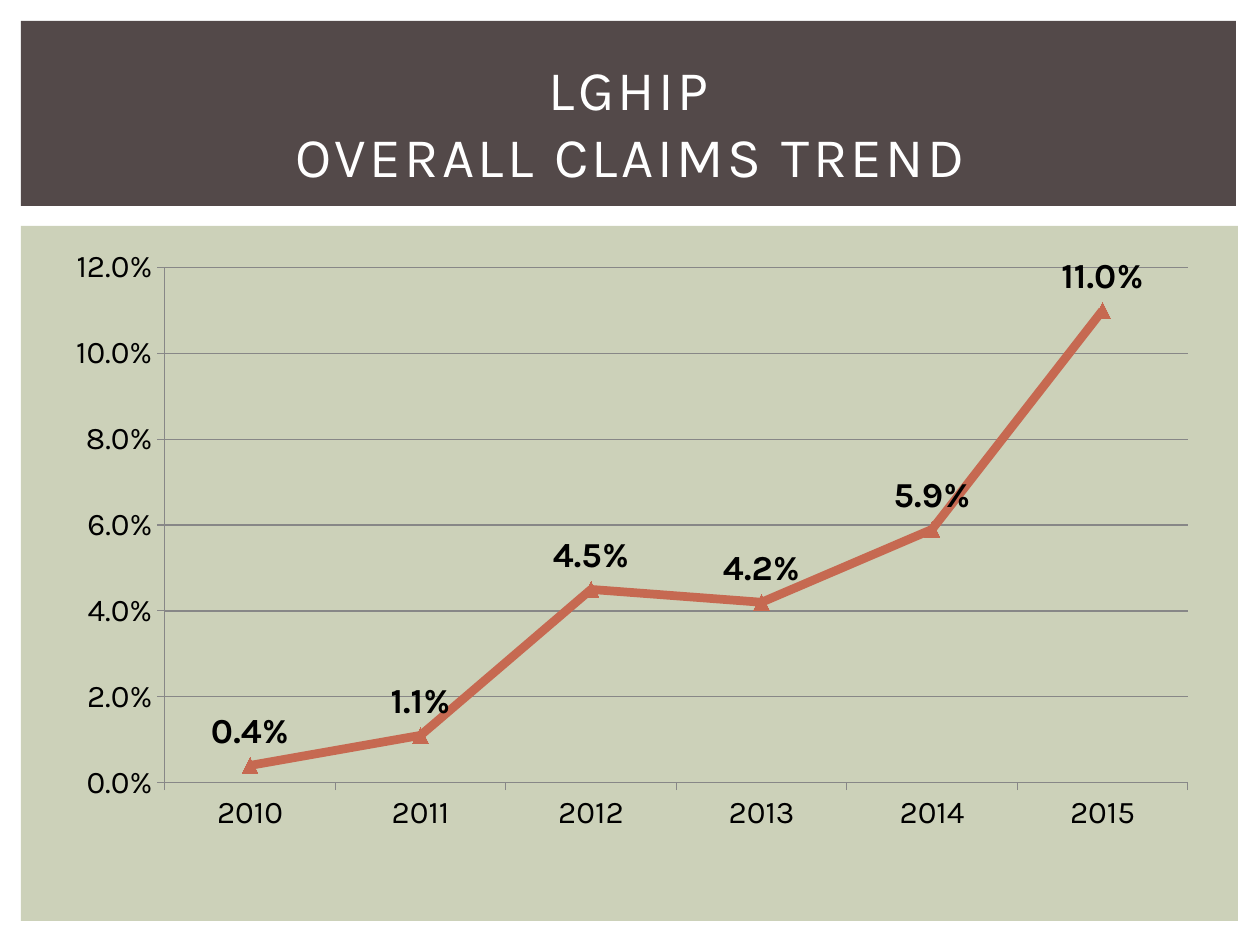
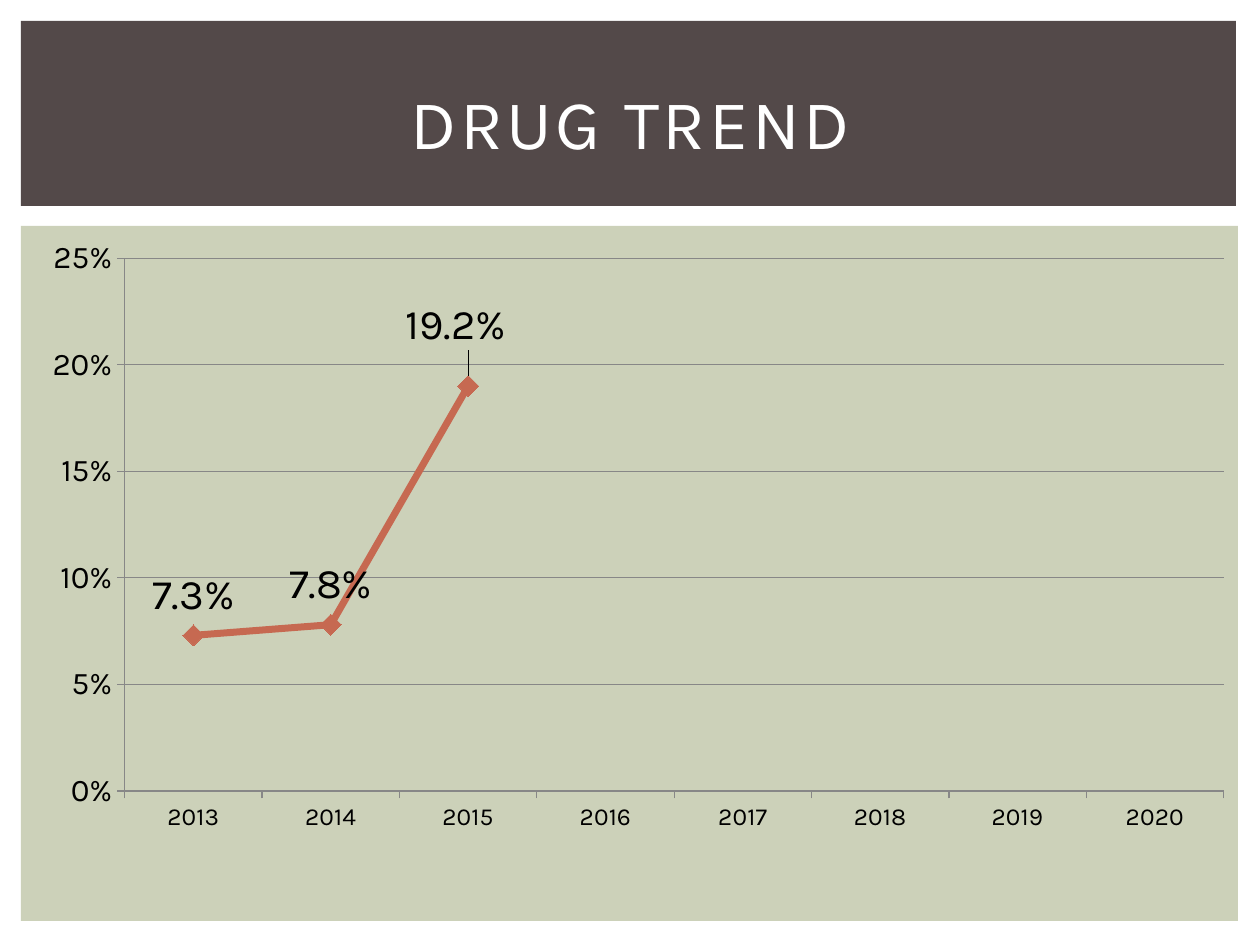
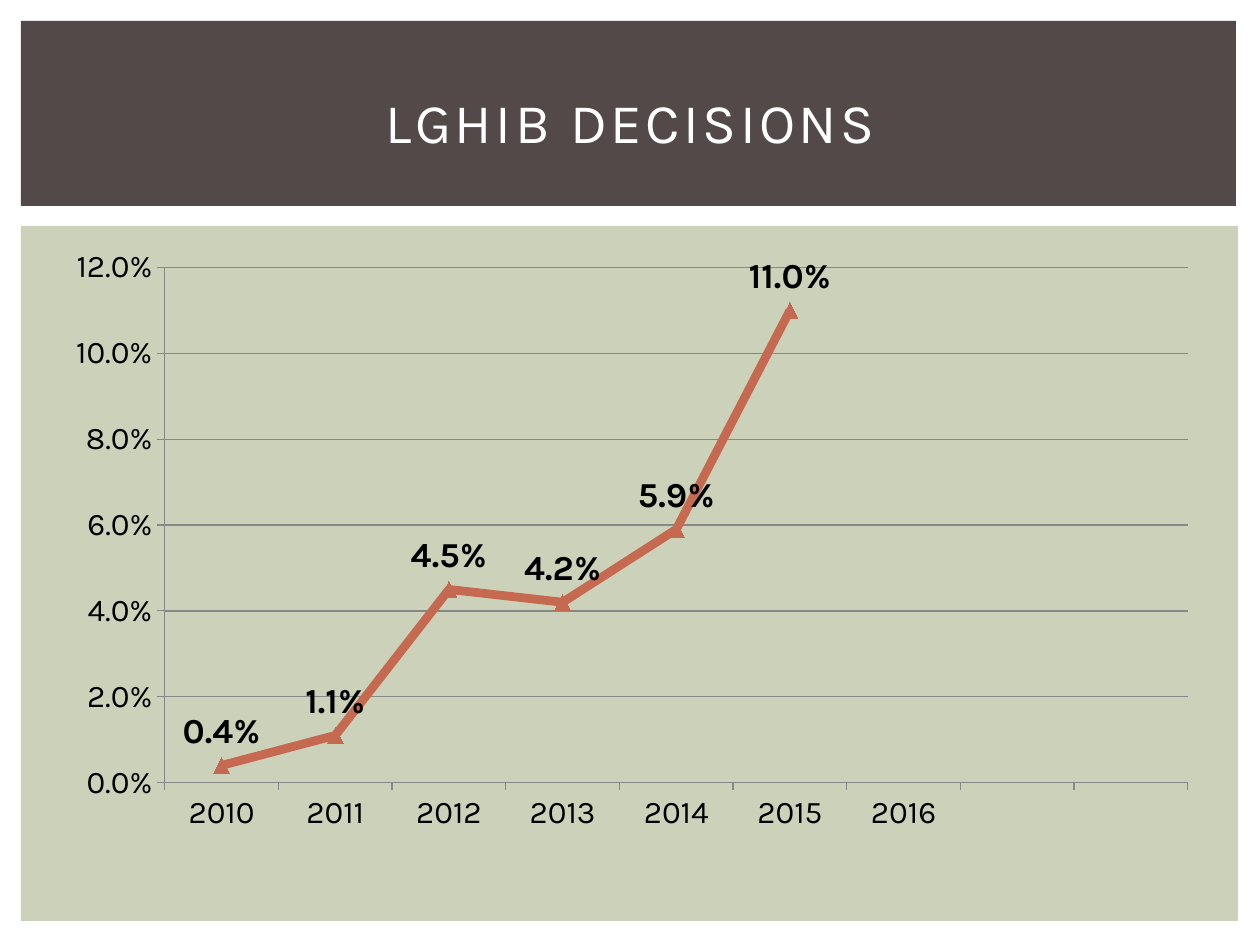
from lxml import etree
from pptx import Presentation
from pptx import util as u
from pptx.chart import data as chart_data
from pptx.dml import color
from pptx.enum import chart as chart_enum, shapes, text
from pptx.oxml import ns

PX = u.Inches(1) / 126
FONT = "Karla"
COLORS = {
    "panel": "CCD1B9",
    "band": "534949",
    "title": "FFFFFF",
    "text": "000000",
    "line": "C66951",
    "grid": "878787",
}
BACKDROP = [("panel", (21, 226, 1217, 695)), ("band", (21, 21, 1215, 185))]
TITLE_BOX = (53, 49, 1155, 145)

CLAIMS = [0.004, 0.011, 0.045, 0.042, 0.059, 0.11]
CLAIMS_STYLE = {
    "box": (53, 237, 1158, 607), "format": "0.0%", "maximum": 0.12, "step": 0.02,
    "year_size": 18, "label_size": 20, "label_bold": True,
    "marker": "TRIANGLE", "marker_size": 9, "line_width": 5,
}
DRUG_STYLE = {
    "box": (21, 231, 1221, 683), "format": "0%", "maximum": 0.25, "step": 0.05,
    "year_size": 14, "label_size": 24, "label_bold": False,
    "marker": "DIAMOND", "marker_size": 12, "line_width": 4,
    "plot": {"x": 0.085, "y": 0.04, "w": 0.9, "h": 0.78},
    "moved_label": (2, "19.2%", {"x": -0.01, "y": -0.03}),
}
SLIDES = [
    (["LGHIP", "OVERALL CLAIMS TREND"], 32,
     [str(year) for year in range(2010, 2016)], CLAIMS, CLAIMS_STYLE),
    (["DRUG TREND"], 40,
     [str(year) for year in range(2013, 2021)], [0.073, 0.078, 0.19], DRUG_STYLE),
    (["LGHIB DECISIONS"], 32,
     [str(year) for year in range(2010, 2017)] + ["", ""], CLAIMS, CLAIMS_STYLE),
]


def emu(box):
    return [u.Emu(round(length * PX)) for length in box]


def manual_layout(values, inner=False):
    """Return a c:layout element with the given fractions of the chart."""
    layout = etree.Element(ns.qn("c:layout"))
    manual = etree.SubElement(layout, ns.qn("c:manualLayout"))
    settings = dict(values)
    if inner:
        settings = {"layoutTarget": "inner", "xMode": "edge", "yMode": "edge", **values}
    for name, value in settings.items():
        etree.SubElement(manual, ns.qn(f"c:{name}")).set("val", str(value))
    return layout


presentation = Presentation()
presentation.slide_width, presentation.slide_height = emu((1260, 945))
rgb = {name: color.RGBColor.from_string(value) for name, value in COLORS.items()}

for title_lines, title_size, years, values, style in SLIDES:
    slide = presentation.slides.add_slide(presentation.slide_layouts[6])
    for name, box in BACKDROP:
        shape = slide.shapes.add_shape(shapes.MSO_SHAPE.RECTANGLE, *emu(box))
        shape.shadow.inherit = False
        shape.fill.solid()
        shape.fill.fore_color.rgb = rgb[name]
        shape.line.fill.background()

    # Chart
    data = chart_data.CategoryChartData(number_format="0.0%")
    data.categories = years
    data.add_series("Series 1", values + [None] * (len(years) - len(values)))
    chart = slide.shapes.add_chart(
        chart_enum.XL_CHART_TYPE.LINE_MARKERS, *emu(style["box"]), data).chart
    chart.has_legend = False
    chart.has_title = False
    chart.font.name = FONT
    chart.font.size = u.Pt(18)
    chart.font.color.rgb = rgb["text"]

    year_axis, percent_axis = chart.category_axis, chart.value_axis
    year_axis.tick_labels.font.size = u.Pt(style["year_size"])
    percent_axis.minimum_scale = 0
    percent_axis.maximum_scale = style["maximum"]
    percent_axis.major_unit = style["step"]
    percent_axis.tick_labels.number_format = style["format"]
    percent_axis.tick_labels.number_format_is_linked = False
    percent_axis.has_major_gridlines = True
    for axis in (year_axis, percent_axis):
        axis.major_tick_mark = chart_enum.XL_TICK_MARK.OUTSIDE
    for ruled in (year_axis, percent_axis, percent_axis.major_gridlines):
        ruled.format.line.color.rgb = rgb["grid"]
        ruled.format.line.width = u.Pt(0.75)

    plot = chart.plots[0]
    plot.vary_by_categories = False
    series = plot.series[0]
    series.smooth = False
    series.format.line.color.rgb = rgb["line"]
    series.format.line.width = u.Pt(style["line_width"])
    marker = series.marker
    marker.style = chart_enum.XL_MARKER_STYLE[style["marker"]]
    marker.size = style["marker_size"]
    marker.format.fill.solid()
    marker.format.fill.fore_color.rgb = rgb["line"]
    marker.format.line.fill.background()

    labels = series.data_labels
    labels.show_value = True
    labels.position = chart_enum.XL_LABEL_POSITION.ABOVE
    labels.number_format = "0.0%"
    labels.number_format_is_linked = False
    labels.font.name = FONT
    labels.font.size = u.Pt(style["label_size"])
    labels.font.bold = style["label_bold"]
    labels.font.color.rgb = rgb["text"]

    if "plot" in style:
        plot_area = chart.element.find(".//" + ns.qn("c:plotArea"))
        for layout in plot_area.findall(ns.qn("c:layout")):
            plot_area.remove(layout)
        plot_area.insert(0, manual_layout(style["plot"], inner=True))
    if "moved_label" in style:
        index, wording, offset = style["moved_label"]
        label = series.points[index].data_label
        run = label.text_frame.paragraphs[0].add_run()
        run.text = wording
        run.font.name = FONT
        run.font.size = u.Pt(style["label_size"])
        run.font.color.rgb = rgb["text"]
        label.position = chart_enum.XL_LABEL_POSITION.ABOVE
        label_index = series.data_labels._element.find(
            ns.qn("c:dLbl") + "/" + ns.qn("c:idx"))
        label_index.addnext(manual_layout(offset))

    # Title
    frame = slide.shapes.add_textbox(*emu(TITLE_BOX)).text_frame
    frame.word_wrap = True
    frame.vertical_anchor = text.MSO_ANCHOR.MIDDLE
    paragraph = frame.paragraphs[0]
    paragraph.alignment = text.PP_ALIGN.CENTER
    for number, line in enumerate(title_lines):
        if number:
            paragraph.add_line_break()
        run = paragraph.add_run()
        run.text = line
        run.font.name = FONT
        run.font.size = u.Pt(title_size)
        run.font.color.rgb = rgb["title"]
        run.font._element.set("spc", "200")

presentation.save("out.pptx")
